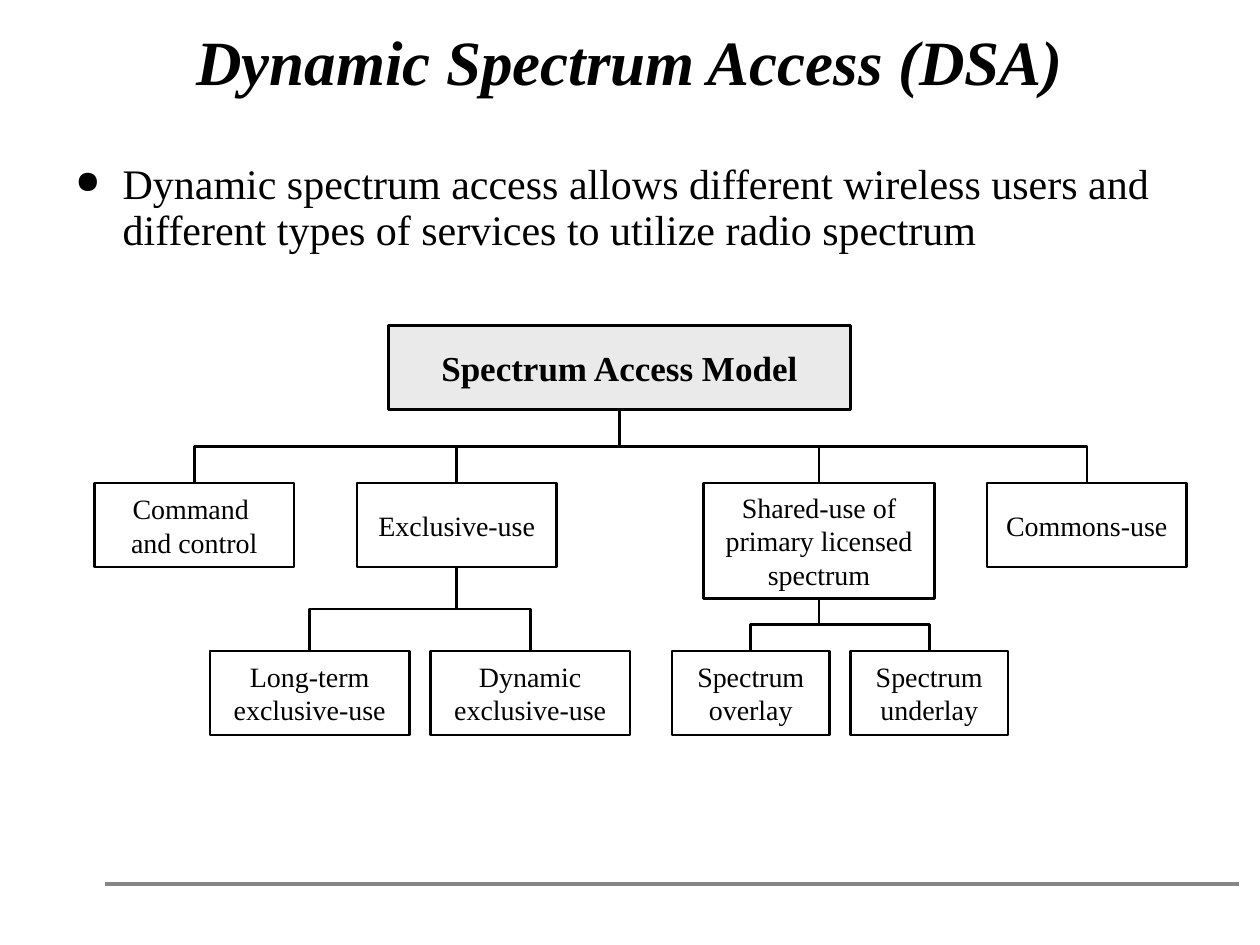
import lxml.etree
import pptx
import pptx.dml.color
import pptx.enum.shapes
import pptx.enum.text
import pptx.oxml.ns
import pptx.util
from dataclasses import dataclass

EMU_PER_PX = 7620  # 120 px to the inch
ALIGN = pptx.enum.text.PP_ALIGN
ANCHOR = pptx.enum.text.MSO_ANCHOR
CONNECTOR = pptx.enum.shapes.MSO_CONNECTOR
qn = pptx.oxml.ns.qn


@dataclass(frozen=True)
class Theme:
    font: str = "Times New Roman"
    ink: str = "000000"
    paper: str = "FFFFFF"
    root_fill: str = "EAEAEA"
    rule: str = "868686"
    title_size: int = 36
    body_size: int = 24
    root_size: int = 20
    node_size: int = 16
    box_line: float = 1.5
    rule_line: float = 2.25


THEME = Theme()


def px(value):
    return pptx.util.Emu(round(value * EMU_PER_PX))


def rgb(color):
    return pptx.dml.color.RGBColor.from_string(color)


def apply(target, values):
    for name, value in values.items():
        setattr(target, name, value)


def write_text(shape, lines, size, paragraph_format, frame_format, **font_format):
    """Fill a shape with one paragraph for each line."""
    frame = shape.text_frame
    apply(frame, frame_format)
    frame.text = "\n".join(lines)
    for paragraph in frame.paragraphs:
        apply(paragraph, paragraph_format)
        for run in paragraph.runs:
            apply(run.font, {"name": THEME.font, "size": pptx.util.Pt(size), **font_format})
            run.font.color.rgb = rgb(THEME.ink)


def style_connector(connector, color, width):
    connector.line.color.rgb = rgb(color)
    connector.line.width = pptx.util.Pt(width)
    lxml.etree.SubElement(connector._element.spPr, qn("a:effectLst"))


def add_bullet(paragraph, indent):
    properties = paragraph._p.get_or_add_pPr()
    properties.set("marL", str(px(indent)))
    properties.set("indent", str(-px(indent)))
    color = lxml.etree.SubElement(properties, qn("a:buClr"))
    lxml.etree.SubElement(color, qn("a:srgbClr"), val=THEME.ink)
    lxml.etree.SubElement(properties, qn("a:buSzPct"), val="75000")
    lxml.etree.SubElement(properties, qn("a:buChar"), char="●")


def add_title(slide, box, text):
    shape = slide.shapes.add_textbox(*map(px, box))
    write_text(shape, [text], THEME.title_size,
               {"alignment": ALIGN.CENTER, "line_spacing": 0.85},
               {"word_wrap": True, "vertical_anchor": ANCHOR.BOTTOM},
               bold=True, italic=True)


def add_body(slide, box, text):
    shape = slide.shapes.add_textbox(*map(px, box))
    write_text(shape, [text], THEME.body_size,
               {"alignment": ALIGN.LEFT, "line_spacing": 0.9}, {"word_wrap": True})
    add_bullet(shape.text_frame.paragraphs[0], 45)


def add_footer_rule(slide, box):
    left, top, width, height = box
    rule = slide.shapes.add_connector(
        CONNECTOR.STRAIGHT, *map(px, (left, top, left + width, top + height)))
    style_connector(rule, THEME.rule, THEME.rule_line)


def add_node(slide, box, lines, fill, size, bold):
    node = slide.shapes.add_shape(pptx.enum.shapes.MSO_SHAPE.RECTANGLE, *map(px, box))
    node.shadow.inherit = False
    node.fill.solid()
    node.fill.fore_color.rgb = rgb(fill)
    node.line.color.rgb = rgb(THEME.ink)
    node.line.width = pptx.util.Pt(THEME.box_line)
    write_text(node, lines, size, {"alignment": ALIGN.CENTER},
               {"word_wrap": False, "vertical_anchor": ANCHOR.MIDDLE}, bold=bold)
    return box


def add_branch(slide, parent, child):
    """Elbow from the parent's bottom centre to the child's top centre."""
    start_x, start_y = parent[0] + parent[2] / 2, parent[1] + parent[3]
    end_x, end_y = child[0] + child[2] / 2, child[1]
    drop, reach = end_y - start_y, abs(end_x - start_x)
    # The elbow preset runs sideways, so it is turned about its centre
    left = (start_x + end_x - drop) / 2
    top = (start_y + end_y - reach) / 2
    branch = slide.shapes.add_connector(
        CONNECTOR.ELBOW, *map(px, (left, top, left + drop, top + reach)))
    transform = branch._element.spPr.find(qn("a:xfrm"))
    if end_x < start_x:
        transform.set("rot", str(90 * 60000))
    else:
        transform.set("rot", str(270 * 60000))
        transform.set("flipH", "1")
    style_connector(branch, THEME.ink, THEME.box_line)


def add_tree(slide, box):
    left, top, width, height = box
    node_height = 80
    middle_row, bottom_row = 150, height - node_height

    # Key: lines, parent, x, y, width, height
    nodes = {
        "root": (["Spectrum Access Model"], None, 280, 0, 440, node_height),
        "command": (["Command ", "and control"], "root", 0, middle_row, 190, node_height),
        "exclusive": (["Exclusive-use"], "root", 250, middle_row, 190, node_height),
        "shared": (["Shared-use of", "primary licensed", "spectrum"], "root",
                   580, middle_row, 220, 110),
        "commons": (["Commons-use"], "root", width - 190, middle_row, 190, node_height),
        "long-term": (["Long-term", "exclusive-use"], "exclusive",
                      110, bottom_row, 190, node_height),
        "dynamic": (["Dynamic", "exclusive-use"], "exclusive",
                    320, bottom_row, 190, node_height),
        "overlay": (["Spectrum", "overlay"], "shared", 550, bottom_row, 150, node_height),
        "underlay": (["Spectrum", "underlay"], "shared", 720, bottom_row, 150, node_height),
    }
    placed = {}
    for key, (lines, parent, x, y, node_width, own_height) in nodes.items():
        is_root = parent is None
        placed[key] = add_node(
            slide, (left + x, top + y, node_width, own_height), lines,
            THEME.root_fill if is_root else THEME.paper,
            THEME.root_size if is_root else THEME.node_size, is_root)
    for key, (_, parent, *_) in nodes.items():
        if parent:
            add_branch(slide, placed[parent], placed[key])


def main():
    presentation = pptx.Presentation()
    apply(presentation, {"slide_width": px(1200), "slide_height": px(900)})
    slide = presentation.slides.add_slide(presentation.slide_layouts[6])
    slide.background.fill.solid()
    slide.background.fill.fore_color.rgb = rgb(THEME.paper)

    add_footer_rule(slide, (100, 842, 1080, 0))
    add_title(slide, (60, 0, 1080, 100), "Dynamic Spectrum Access (DSA)")
    add_body(slide, (60, 150, 1080, 190),
             "Dynamic spectrum access allows different wireless users and "
             "different types of services to utilize radio spectrum")
    add_tree(slide, (90, 310, 1040, 390))
    presentation.save("out.pptx")


if __name__ == "__main__":
    main()
